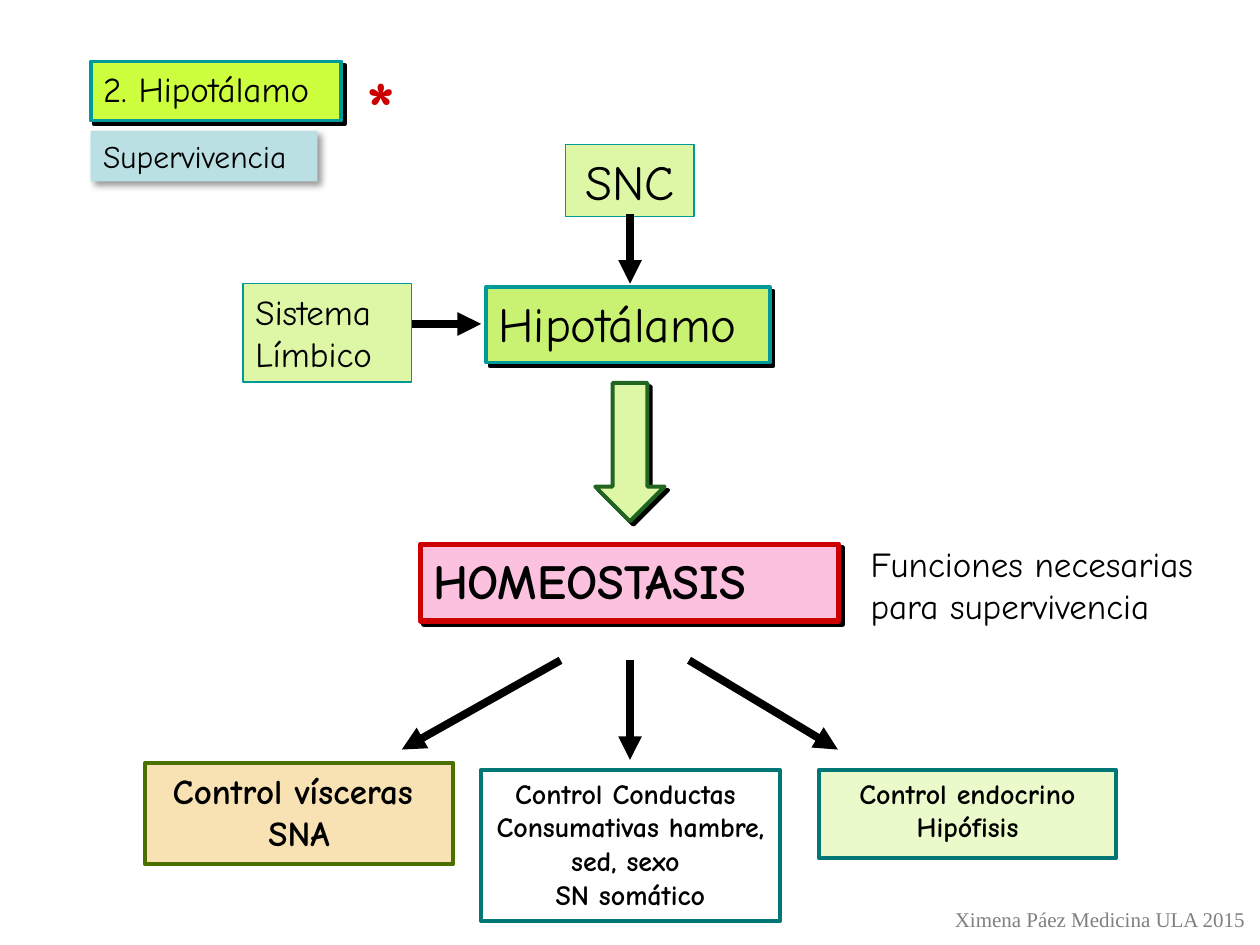
from dataclasses import dataclass
from typing import Optional

from lxml import etree
from pptx import Presentation
from pptx import util as u
from pptx.dml.color import RGBColor
from pptx.enum import shapes, text
from pptx.oxml import ns

BLACK = RGBColor(0x00, 0x00, 0x00)
GREY = RGBColor(0x80, 0x80, 0x80)
RED = RGBColor(0xCC, 0x00, 0x00)
PINK = RGBColor(0xFB, 0xC1, 0xDF)
LIME = RGBColor(0xCD, 0xFF, 0x3F)
GREEN = RGBColor(0xCA, 0xF2, 0x72)
PALE_GREEN = RGBColor(0xDE, 0xF7, 0xA7)
MINT = RGBColor(0xEB, 0xFA, 0xCA)
DARK_GREEN = RGBColor(0x21, 0x65, 0x21)
OLIVE = RGBColor(0x4B, 0x70, 0x00)
SAND = RGBColor(0xF8, 0xE1, 0xB2)
TEAL = RGBColor(0x00, 0x99, 0x99)
DARK_TEAL = RGBColor(0x00, 0x77, 0x74)
LIGHT_BLUE = RGBColor(0xBB, 0xE0, 0xE3)

LEFT, CENTER = text.PP_ALIGN.LEFT, text.PP_ALIGN.CENTER
HARD = (100, 0, 2.8)  # opacity in percent, blur and distance in points
SOFT = (40, 4, 3)


@dataclass
class Box:
    lines: tuple[str, ...]
    place: tuple[float, float, float, float]  # left, top, width, height in cm
    size: float
    fill: Optional[RGBColor] = None
    border: Optional[RGBColor] = None
    weight: float = 2.25
    shadow: Optional[tuple[float, float, float]] = None
    bold: bool = False
    align: text.PP_ALIGN = LEFT
    color: RGBColor = BLACK
    font: str = "Comic Neue"
    wrap: bool = True


@dataclass
class Arrow:
    start: tuple[float, float]
    end: tuple[float, float]


TITLE = Box(("2. Hipotálamo",), (1.83, 1.24, 5.05, 1.19), 20, LIME, TEAL, shadow=HARD)
STAR = Box(("*",), (7.14, 1.07, 1.32, 2.11), 44, bold=True, color=RED)
BOXES = [
    Box(("Supervivencia",), (1.83, 2.64, 4.57, 1.02), 18, LIGHT_BLUE, shadow=SOFT),
    Box(("SNC",), (11.4, 2.92, 2.59, 1.45), 28, PALE_GREEN, TEAL, 0.75, align=CENTER),
    Box(("Hipotálamo",), (9.8, 5.79, 5.72, 1.52), 28, GREEN, TEAL, shadow=HARD),
    Box(("Sistema", "Límbico"), (4.9, 5.72, 3.4, 1.98), 20, PALE_GREEN, TEAL, 0.75),
    Box(("HOMEOSTASIS",), (8.48, 10.97, 8.43, 1.55), 28, PINK, RED, 3, HARD, True),
    Box(("Funciones necesarias", "para supervivencia"), (17.3, 10.8, 7.59, 1.96), 20),
    Box(("Control vísceras ", "SNA"), (2.92, 15.39, 6.22, 2.03), 20,
        SAND, OLIVE, bold=True, align=CENTER),
    Box(("Control Conductas ", "Consumativas hambre, sed, sexo ", "SN somático"),
        (9.7, 15.52, 6.02, 3.05), 16, None, DARK_TEAL, bold=True, align=CENTER),
    Box(("Control endocrino", "Hipófisis"), (16.51, 15.52, 5.99, 1.78), 16,
        MINT, DARK_TEAL, bold=True, align=CENTER),
    Box(("Ximena Páez Medicina ULA 2015",), (19, 18.14, 6.43, 0.76), 12,
        color=GREY, font="Times New Roman", wrap=False),
]
FLOW_X, FAN_TOP, FAN_SIDE = 12.7, 13.31, 15.11
ARROWS = [
    Arrow((FLOW_X, 4.32), (FLOW_X, 5.72)),
    Arrow((8.31, 6.53), (9.7, 6.53)),
    Arrow((11.3, FAN_TOP), (8.1, FAN_SIDE)),
    Arrow((FLOW_X, FAN_TOP), (FLOW_X, 15.32)),
    Arrow((13.89, FAN_TOP), (16.89, FAN_SIDE)),
]


def shadow_effect(opacity: float, blur: float, distance: float) -> etree._Element:
    effects = etree.Element(ns.qn("a:effectLst"))
    outer = etree.SubElement(effects, ns.qn("a:outerShdw"), blurRad=str(u.Pt(blur)),
                             dist=str(u.Pt(distance)), dir="2700000",
                             algn="tl", rotWithShape="0")
    shade = etree.SubElement(outer, ns.qn("a:srgbClr"), val=str(BLACK))
    etree.SubElement(shade, ns.qn("a:alpha"), val=str(opacity * 1000))
    return effects


def style_outline(shape, fill, border, weight, shadow) -> None:
    if fill is None:
        shape.fill.background()
    else:
        shape.fill.solid()
        shape.fill.fore_color.rgb = fill
    if border is None:
        shape.line.fill.background()
    else:
        shape.line.color.rgb = border
        shape.line.width = u.Pt(weight)
    if shadow:
        shape._element.spPr.append(shadow_effect(*shadow))
    elif hasattr(shape, "shadow"):
        shape.shadow.inherit = False


def write_text(shape, box: Box) -> None:
    frame = shape.text_frame
    frame_format = {
        "word_wrap": box.wrap,
        "auto_size": text.MSO_AUTO_SIZE.NONE,
        "vertical_anchor": text.MSO_ANCHOR.TOP,
        "margin_left": u.Cm(0.25), "margin_right": u.Cm(0.25),
        "margin_top": u.Cm(0.13), "margin_bottom": u.Cm(0.13),
    }
    for name, value in frame_format.items():
        setattr(frame, name, value)
    frame.text = "\n".join(box.lines)
    font_format = {"name": box.font, "size": u.Pt(box.size), "bold": box.bold}
    for paragraph in frame.paragraphs:
        paragraph.alignment = box.align
        font = paragraph.runs[0].font
        for name, value in font_format.items():
            setattr(font, name, value)
        font.color.rgb = box.color


def draw_box(slide, box: Box, placeholder=None):
    """Draw a box as a text box, a rectangle or in the given placeholder."""
    place = [u.Cm(length) for length in box.place]
    if placeholder is not None:
        shape = placeholder
        shape.left, shape.top, shape.width, shape.height = place
    elif box.fill is None and box.border is None:
        shape = slide.shapes.add_textbox(*place)
    else:
        shape = slide.shapes.add_shape(shapes.MSO_SHAPE.RECTANGLE, *place)
    style_outline(shape, box.fill, box.border, box.weight, box.shadow)
    write_text(shape, box)
    return shape


def draw_star(slide) -> None:
    """Draw the red mark, with a shadow on its letter."""
    run = draw_box(slide, STAR).text_frame.paragraphs[0].runs[0]
    fill = run._r.rPr.find(ns.qn("a:solidFill"))
    fill.addnext(shadow_effect(*HARD))


def draw_arrow(slide, arrow: Arrow) -> None:
    ends = [u.Cm(length) for length in (*arrow.start, *arrow.end)]
    line = slide.shapes.add_connector(shapes.MSO_CONNECTOR.STRAIGHT, *ends)
    line.line.color.rgb = BLACK
    line.line.width = u.Pt(4.5)
    etree.SubElement(line.line._get_or_add_ln(), ns.qn("a:tailEnd"), type="triangle")
    etree.SubElement(line._element.spPr, ns.qn("a:effectLst"))


def main() -> None:
    deck = Presentation()
    deck.slide_width, deck.slide_height = u.Cm(25.4), u.Cm(19.05)
    slide = deck.slides.add_slide(deck.slide_layouts[5])
    draw_box(slide, TITLE, slide.shapes.title)
    draw_star(slide)
    for box in BOXES:
        draw_box(slide, box)
    down = slide.shapes.add_shape(shapes.MSO_SHAPE.DOWN_ARROW,
                                  u.Cm(12), u.Cm(7.72), u.Cm(1.4), u.Cm(2.79))
    style_outline(down, PALE_GREEN, DARK_GREEN, 2.25, HARD)
    for arrow in ARROWS:
        draw_arrow(slide, arrow)
    deck.save("out.pptx")


if __name__ == "__main__":
    main()
